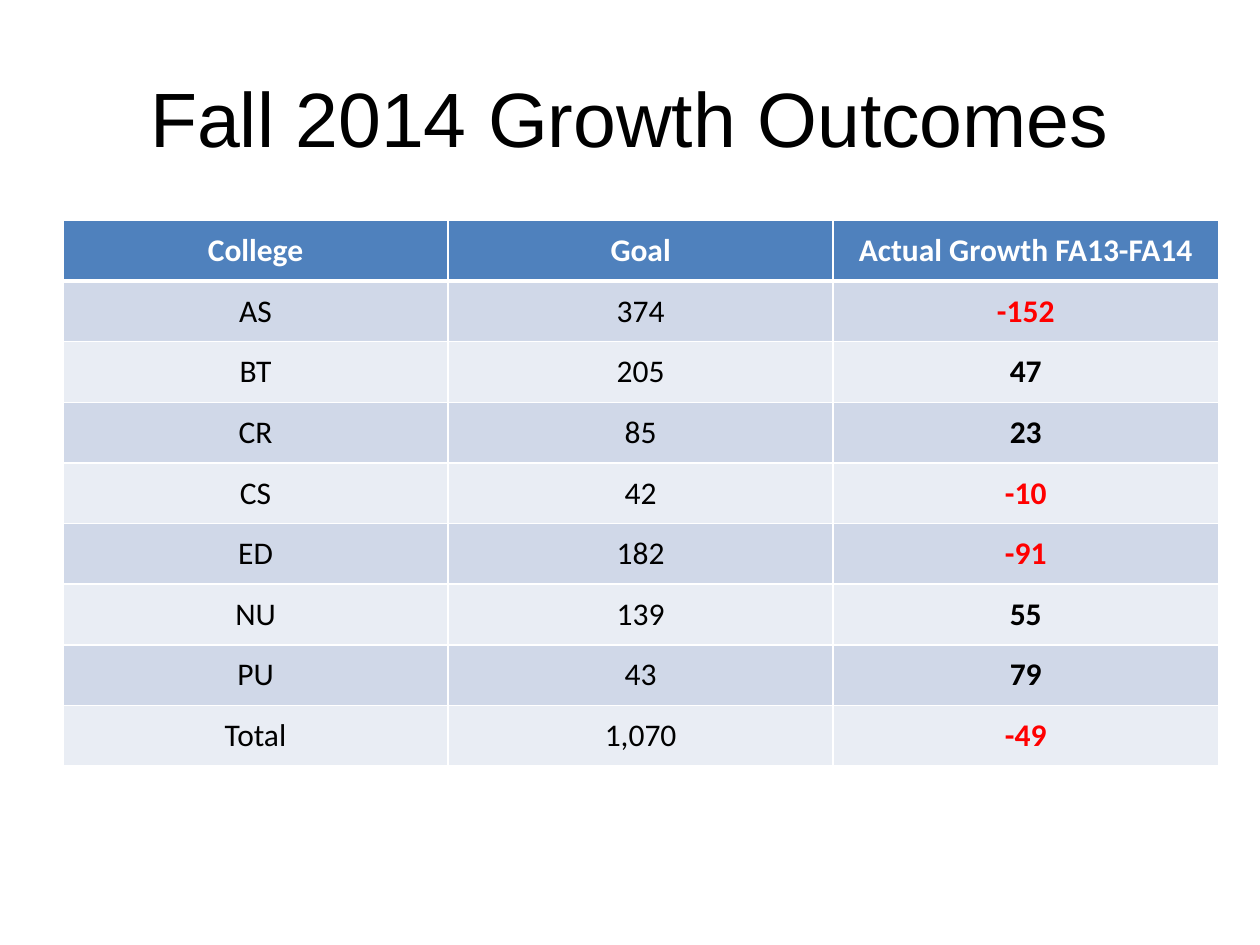
from lxml.etree import SubElement
from pptx import Presentation
from pptx.dml.color import RGBColor
from pptx.enum.text import MSO_ANCHOR, PP_ALIGN
from pptx.oxml.ns import qn
from pptx.util import Inches, Pt

COLORS = {
    "text": "000000",
    "negative": "FF0000",
    "white": "FFFFFF",
    "header": "4F81BD",
    "band_dark": "D0D8E8",
    "band_light": "E9EDF4",
}
HEADER = ("College", "Goal", "Actual Growth FA13-FA14")
COLLEGES = [
    ("AS", "374", "-152"),
    ("BT", "205", "47"),
    ("CR", "85", "23"),
    ("CS", "42", "-10"),
    ("ED", "182", "-91"),
    ("NU", "139", "55"),
    ("PU", "43", "79"),
    ("Total", "1,070", "-49"),
]


def write_text(tf, text, *, size=18, font="Calibri", color="text", bold=False):
    """Write one centred run into a text frame."""
    p = tf.paragraphs[0]
    p.alignment = PP_ALIGN.CENTER
    r = p.add_run()
    r.text = text
    r.font.size = Pt(size)
    r.font.name = font
    r.font.bold = bold
    r.font.color.rgb = RGBColor.from_string(COLORS[color])


def add_title(s, text):
    """Add the slide title."""
    tf = s.shapes.add_textbox(Inches(0.5), Inches(0.3), Inches(9), Inches(1.25)).text_frame
    tf.word_wrap = True
    tf.vertical_anchor = MSO_ANCHOR.MIDDLE
    write_text(tf, text, size=44, font="Arial")


def set_borders(cell, top=1, bottom=1):
    """Draw white borders around a cell, with widths in points."""
    tc_pr = cell._tc.get_or_add_tcPr()
    widths = {"a:lnL": 1, "a:lnR": 1, "a:lnT": top, "a:lnB": bottom}
    for tag, width in widths.items():
        ln = SubElement(tc_pr, qn(tag), w=str(Pt(width)))
        fill = SubElement(ln, qn("a:solidFill"))
        SubElement(fill, qn("a:srgbClr"), val=COLORS["white"])


def format_cell(cell, text, row, col):
    """Fill one cell according to its row and column."""
    is_header = row == 0
    is_growth = col == len(HEADER) - 1
    if is_header:
        fill, color = "header", "white"
    else:
        fill = "band_dark" if row % 2 else "band_light"
        color = "negative" if text.startswith("-") else "text"
    set_borders(cell, top=3 if row == 1 else 1, bottom=3 if is_header else 1)
    cell.fill.solid()
    cell.fill.fore_color.rgb = RGBColor.from_string(COLORS[fill])
    cell.vertical_anchor = MSO_ANCHOR.MIDDLE
    write_text(cell.text_frame, text, color=color, bold=is_header or is_growth)


def add_growth_table(s):
    """Add the table of goals and growth by college."""
    rows = [HEADER, *COLLEGES]
    table = s.shapes.add_table(len(rows), len(HEADER), Inches(0.5), Inches(1.75),
                               Inches(9.17), Inches(4.33)).table
    for i, values in enumerate(rows):
        for j, text in enumerate(values):
            format_cell(table.cell(i, j), text, i, j)


def main():
    """Build and save the slide."""
    prs = Presentation()
    prs.slide_width, prs.slide_height = Inches(10), Inches(7.5)
    s = prs.slides.add_slide(prs.slide_layouts[6])
    add_title(s, "Fall 2014 Growth Outcomes")
    add_growth_table(s)
    prs.save("out.pptx")


if __name__ == "__main__":
    main()
